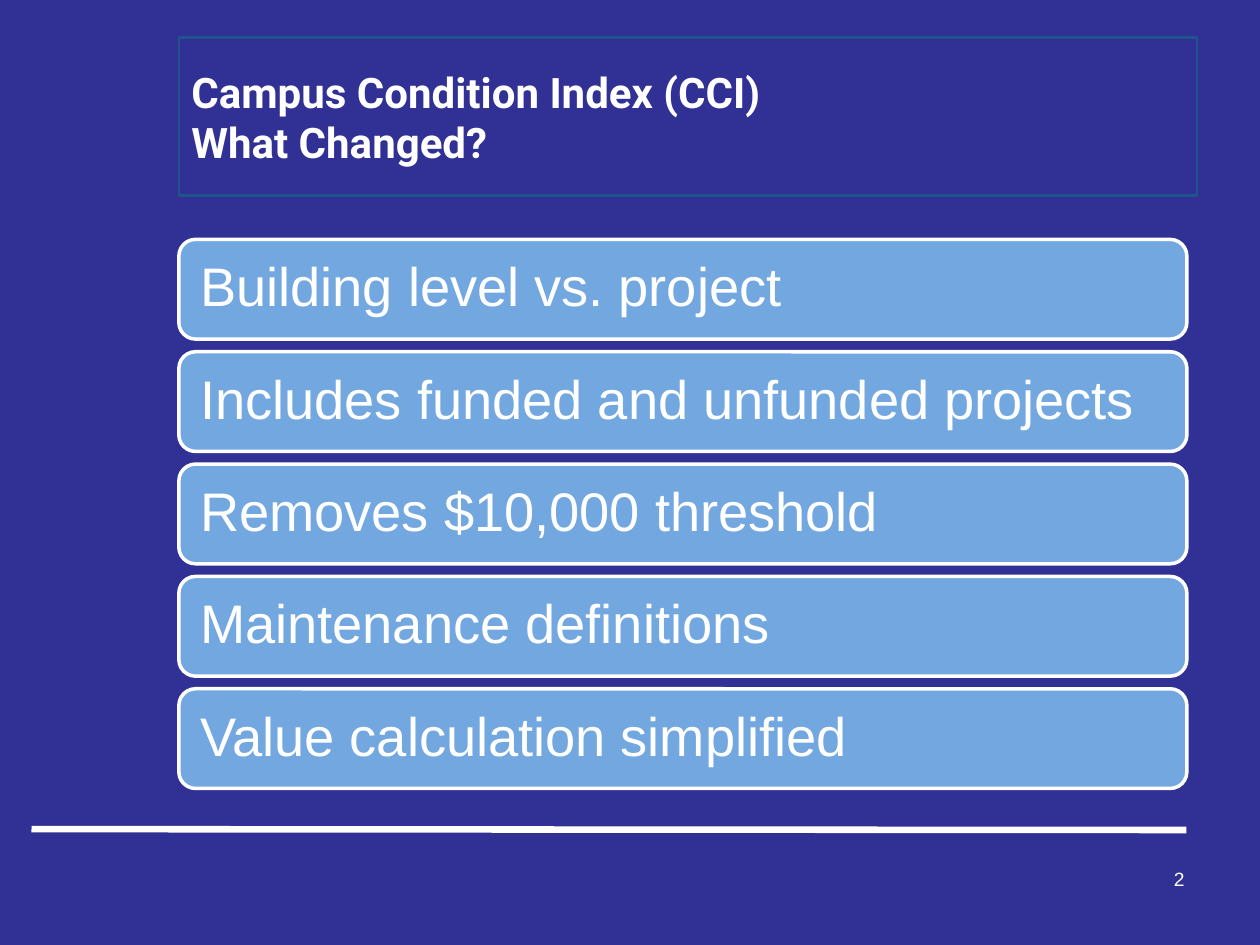
import pptx
import pptx.util
import pptx.dml.color
import pptx.enum.shapes
import pptx.enum.text
import pptx.oxml

Pt = pptx.util.Pt
SHAPE = pptx.enum.shapes.MSO_SHAPE
ALIGN = pptx.enum.text.PP_ALIGN
ANCHOR = pptx.enum.text.MSO_ANCHOR

TITLE = ["Campus Condition Index (CCI)", "What Changed?"]
CHANGES = [
    "Building level vs. project",
    "Includes funded and unfunded projects",
    "Removes $10,000 threshold",
    "Maintenance definitions",
    "Value calculation simplified",
]
PAGE_NUMBER = "2"

THEME = {
    "background": "313195",
    "text": "FFFFFF",
    "bar": "72A7E0",
    "title_border": "1E538B",
    "title_font": {"name": "Roboto", "size": Pt(24), "bold": True},
    "bar_font": {"name": "Arial", "size": Pt(31), "bold": False},
    "number_font": {"name": "Arial", "size": Pt(11), "bold": False},
}

LEFT = 102.24
BAR_TOP, BAR_WIDTH, BAR_HEIGHT, BAR_PITCH = 136.8, 576, 56.95, 64.2
BAR_INSET = 9.4


def rgb(name):
    return pptx.dml.color.RGBColor.from_string(THEME[name])


def set_line(line, color, width):
    line.color.rgb = rgb(color)
    line.width = Pt(width)


def write(shape, lines, font, align=ALIGN.LEFT, anchor=ANCHOR.MIDDLE):
    """Fill a shape with one paragraph, its lines parted by line breaks."""
    frame = shape.text_frame
    frame.word_wrap = True
    frame.vertical_anchor = anchor
    paragraph = frame.paragraphs[0]
    paragraph.alignment = align
    for index, line in enumerate(lines):
        if index:
            paragraph.add_line_break()
        run = paragraph.add_run()
        run.text = line
        for key, value in THEME[font].items():
            setattr(run.font, key, value)
        run.font.color.rgb = rgb("text")
    return frame


def add_box(slide, kind, left, top, width, height):
    box = slide.shapes.add_shape(kind, Pt(left), Pt(top), Pt(width), Pt(height))
    box.shadow.inherit = False
    return box


def add_title(slide):
    title = add_box(slide, SHAPE.RECTANGLE, LEFT, 21.6, 581.76, 90)
    title.fill.background()
    set_line(title.line, "title_border", 1.5)
    write(title, TITLE, "title_font")


def add_bar(slide, row, change):
    bar = add_box(slide, SHAPE.ROUNDED_RECTANGLE,
                  LEFT, BAR_TOP + row * BAR_PITCH, BAR_WIDTH, BAR_HEIGHT)
    bar.fill.solid()
    bar.fill.fore_color.rgb = rgb("bar")
    set_line(bar.line, "text", 2)
    frame = write(bar, [change], "bar_font")
    for side in ("left", "top", "right", "bottom"):
        setattr(frame, f"margin_{side}", Pt(BAR_INSET))
    frame.paragraphs[0].line_spacing = 0.9


def add_footer(slide):
    rule = slide.shapes.add_connector(
        pptx.enum.shapes.MSO_CONNECTOR.STRAIGHT,
        Pt(18), Pt(473.8), Pt(678), Pt(474.3))
    set_line(rule.line, "text", 3.75)
    rule.element.spPr.append(pptx.oxml.parse_xml(
        '<a:effectLst xmlns:a="http://schemas.openxmlformats.org/drawingml/2006/main"/>'))
    number = slide.shapes.add_textbox(Pt(516), Pt(492), Pt(168), Pt(37.5))
    write(number, [PAGE_NUMBER], "number_font", ALIGN.RIGHT, ANCHOR.TOP)


def main():
    deck = pptx.Presentation()
    deck.slide_width, deck.slide_height = Pt(720), Pt(540)
    slide = deck.slides.add_slide(deck.slide_layouts[6])
    slide.background.fill.solid()
    slide.background.fill.fore_color.rgb = rgb("background")

    add_title(slide)
    for row, change in enumerate(CHANGES):
        add_bar(slide, row, change)
    add_footer(slide)
    deck.save("out.pptx")


if __name__ == "__main__":
    main()
